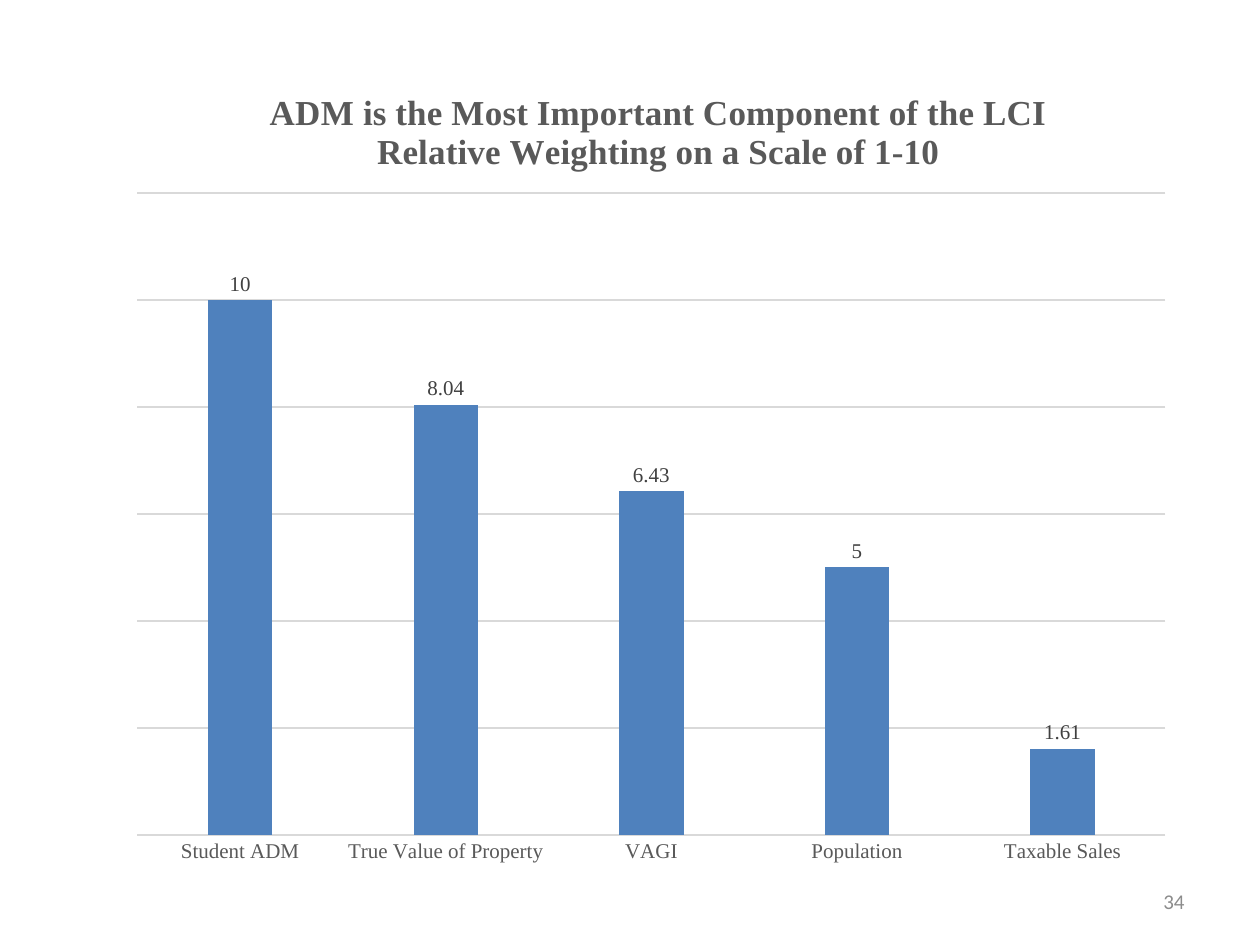
from pptx import Presentation
from pptx.chart.data import CategoryChartData
from pptx.dml.color import RGBColor
from pptx.enum.chart import XL_CHART_TYPE, XL_LABEL_POSITION, XL_TICK_MARK
from pptx.enum.text import MSO_ANCHOR, PP_ALIGN
from pptx.oxml import parse_xml
from pptx.oxml.ns import nsdecls, qn
from pptx.util import Inches, Pt

WEIGHTS = {
    "Student ADM": 10,
    "True Value of Property": 8.04,
    "VAGI": 6.43,
    "Population": 5,
    "Taxable Sales": 1.61,
}
HEADING = [
    "ADM is the Most Important Component of the LCI",
    "Relative Weighting on a Scale of 1-10",
]


def color(code):
    return RGBColor.from_string(code)


def layout(parent, index, **spots):
    """Place a chart part by fractions of the chart's size."""
    for old in parent.findall(qn("c:layout")):
        parent.remove(old)
    target = '<c:layoutTarget val="inner"/>' if "w" in spots else ""
    modes = "".join(f'<c:{k}Mode val="edge"/>' for k in spots if k in "xy")
    sizes = "".join(f'<c:{k} val="{v}"/>' for k, v in spots.items())
    parent.insert(index, parse_xml(
        f'<c:layout {nsdecls("c")}><c:manualLayout>'
        f"{target}{modes}{sizes}</c:manualLayout></c:layout>"))


class Deck:
    serif = "Times New Roman"
    sans = "Calibri"
    gray = "595959"
    rule = "D9D9D9"
    bar = "4F81BD"

    def __init__(self, slide):
        self.slide = slide

    def style(self, font, size, code, name=serif, bold=False):
        font.name, font.size, font.bold = name, Pt(size), bold
        font.color.rgb = color(code)

    def line(self, line):
        line.color.rgb = color(self.rule)
        line.width = Pt(0.75)

    def number(self, text, *box):
        frame = self.slide.shapes.add_textbox(*map(Inches, box)).text_frame
        frame.word_wrap = True
        frame.vertical_anchor = MSO_ANCHOR.MIDDLE
        para = frame.paragraphs[0]
        para.alignment = PP_ALIGN.RIGHT
        run = para.add_run()
        run.text = text
        self.style(run.font, 12, "8C8C8C", self.sans)

    def heading(self, chart, lines):
        chart.has_title = True
        title = chart.chart_title
        title.include_in_layout = False
        frame = title.text_frame
        for i, text in enumerate(lines):
            para = frame.add_paragraph() if i else frame.paragraphs[0]
            para.alignment = PP_ALIGN.CENTER
            run = para.add_run()
            run.text = text
            self.style(run.font, 20, self.gray, bold=True)
        layout(title._element, 1, x=0.14, y=0.03)

    def axes(self, chart):
        cats, vals = chart.category_axis, chart.value_axis
        cats.major_tick_mark = XL_TICK_MARK.NONE
        self.style(cats.tick_labels.font, 12, self.gray)
        self.line(cats.format.line)
        vals.visible = False
        vals.minimum_scale, vals.maximum_scale, vals.major_unit = 0, 12, 2
        vals.has_major_gridlines = True
        self.line(vals.major_gridlines.format.line)

    def columns(self, lines, values, *box):
        data = CategoryChartData()
        data.categories = list(values)
        data.add_series("Series 1", list(values.values()))
        chart = self.slide.shapes.add_chart(
            XL_CHART_TYPE.COLUMN_CLUSTERED, *map(Inches, box), data).chart
        chart.has_legend = False
        self.style(chart.font, 12, "000000")
        self.heading(chart, lines)
        self.axes(chart)
        plot = chart.plots[0]
        plot.gap_width, plot.overlap = 219, -27
        plot.vary_by_categories = False
        fill = plot.series[0].format.fill
        fill.solid()
        fill.fore_color.rgb = color(self.bar)
        labels = plot.series[0].data_labels
        labels.show_value = True
        labels.position = XL_LABEL_POSITION.OUTSIDE_END
        self.style(labels.font, 12, "404040")
        area = chart._chartSpace.chart.plotArea
        layout(area, 0, x=0.02, y=0.16, w=0.96, h=0.79)


def main():
    deck = Presentation()
    deck.slide_width, deck.slide_height = Inches(10), Inches(7.5)
    page = Deck(deck.slides.add_slide(deck.slide_layouts[6]))
    page.number("34", 7.17, 6.95, 2.33, 0.4)
    page.columns(HEADING, WEIGHTS, 0.92, 0.5, 8.5, 6.45)
    deck.save("out.pptx")


if __name__ == "__main__":
    main()
